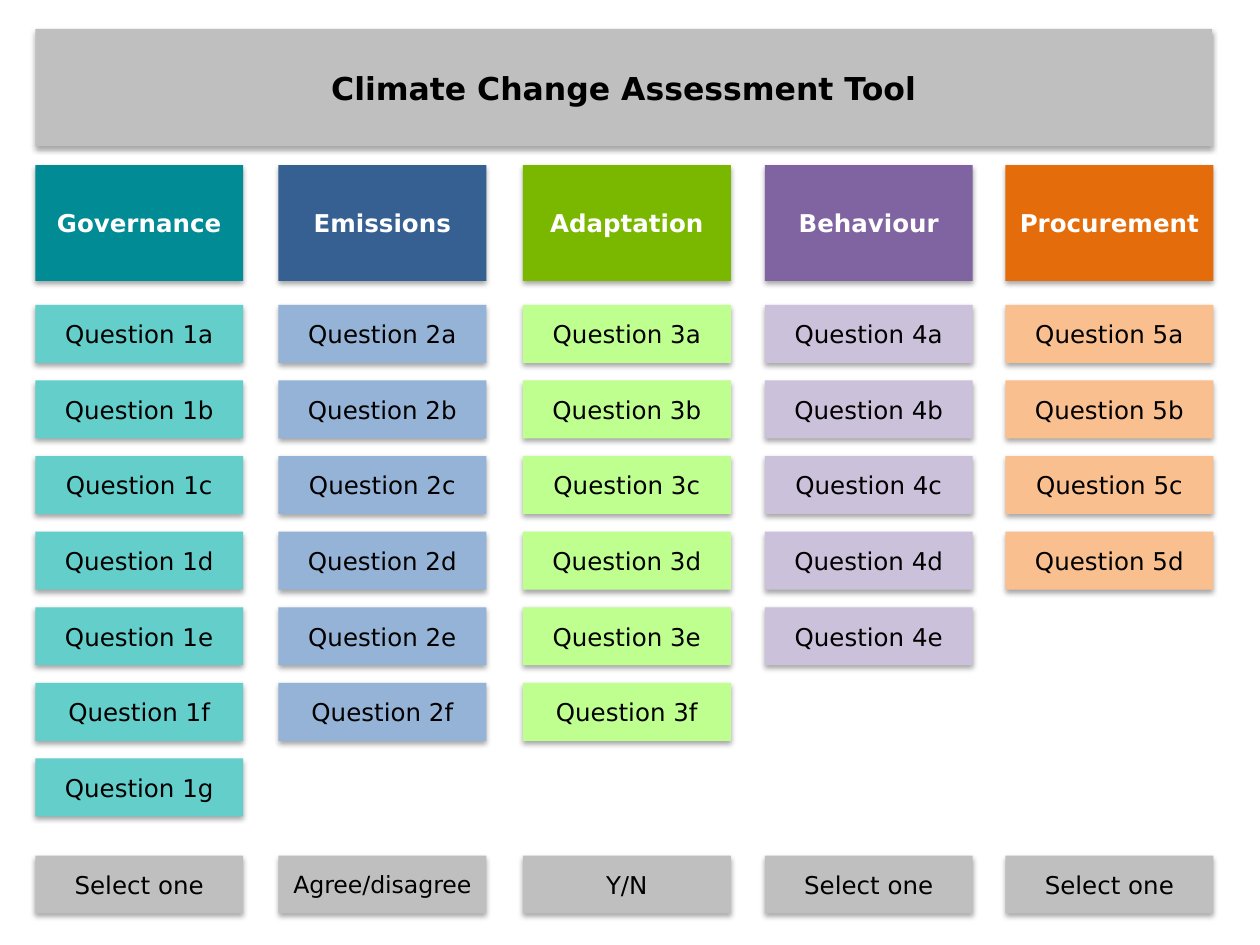
from pptx import Presentation
from pptx.dml.color import RGBColor
from pptx.enum.shapes import MSO_SHAPE
from pptx.enum.text import MSO_ANCHOR, MSO_AUTO_SIZE, PP_ALIGN
from pptx.oxml import parse_xml
from pptx.oxml.ns import nsdecls, qn
from pptx.util import Inches, Pt

TITLE = "Climate Change Assessment Tool"
THEMES = [
    ("Governance", "teal", 0.28, "abcdefg", "Select one", 14),
    ("Emissions", "blue", 2.21, "abcdef", "Agree/disagree", 13.5),
    ("Adaptation", "green", 4.15, "abcdef", "Y/N", 14),
    ("Behaviour", "purple", 6.07, "abcde", "Select one", 14),
    ("Procurement", "orange", 7.98, "abcd", "Select one", 14),
]
COLORS = {
    "teal": "008B95", "light teal": "63CECA",
    "blue": "366092", "light blue": "95B3D7",
    "green": "7AB800", "light green": "BFFF8F",
    "purple": "8064A2", "light purple": "CCC1DA",
    "orange": "E46C0A", "light orange": "FABF8F",
    "grey": "BFBFBF", "black": "000000", "white": "FFFFFF",
}
FONT = "DejaVu Sans"
COLUMN_WIDTH = 1.65
HEADER_TOP, HEADER_HEIGHT = 1.31, 0.92
QUESTION_TOP, QUESTION_PITCH = 2.42, 0.6
ANSWER_TOP, ROW_HEIGHT = 6.79, 0.46


def add_shadow(box):
    box.shadow.inherit = False
    effects = box._element.spPr.find(qn("a:effectLst"))
    effects.append(parse_xml(
        f'<a:outerShdw {nsdecls("a")} blurRad="{Pt(3.1)}" dist="{Pt(1.8)}" '
        f'dir="5400000" rotWithShape="0"><a:srgbClr val="{COLORS["black"]}">'
        '<a:alpha val="35000"/></a:srgbClr></a:outerShdw>'
    ))


def style_box(box, text, fill, size=14, color="black", bold=False):
    box.fill.solid()
    box.fill.fore_color.rgb = RGBColor.from_string(COLORS[fill])
    box.line.fill.background()
    add_shadow(box)
    frame = box.text_frame
    frame.word_wrap = True
    frame.auto_size = MSO_AUTO_SIZE.NONE
    frame.vertical_anchor = MSO_ANCHOR.MIDDLE
    frame.margin_left = frame.margin_right = Inches(0.05)
    frame.text = text
    para = frame.paragraphs[0]
    para.alignment = PP_ALIGN.CENTER
    para.font.name = FONT
    para.font.size = Pt(size)
    para.font.bold = bold
    para.font.color.rgb = RGBColor.from_string(COLORS[color])


def add_box(page, left, top, height, text, fill, **style):
    box = page.shapes.add_shape(
        MSO_SHAPE.RECTANGLE, Inches(left), Inches(top),
        Inches(COLUMN_WIDTH), Inches(height),
    )
    style_box(box, text, fill, **style)


def main():
    deck = Presentation()
    deck.slide_width, deck.slide_height = Inches(10), Inches(7.5)
    page = deck.slides.add_slide(deck.slide_layouts[5])

    title = page.shapes.title
    title.left, title.top = Inches(0.28), Inches(0.23)
    title.width, title.height = Inches(9.34), Inches(0.93)
    style_box(title, TITLE, "grey", size=18, bold=True)

    for number, (name, hue, left, letters, answer, size) in enumerate(THEMES, 1):
        add_box(page, left, HEADER_TOP, HEADER_HEIGHT, name, hue,
                color="white", bold=True)
        for row, letter in enumerate(letters):
            add_box(page, left, QUESTION_TOP + row * QUESTION_PITCH, ROW_HEIGHT,
                    f"Question {number}{letter}", f"light {hue}")
        add_box(page, left, ANSWER_TOP, ROW_HEIGHT, answer, "grey", size=size)

    deck.save("out.pptx")


if __name__ == "__main__":
    main()
